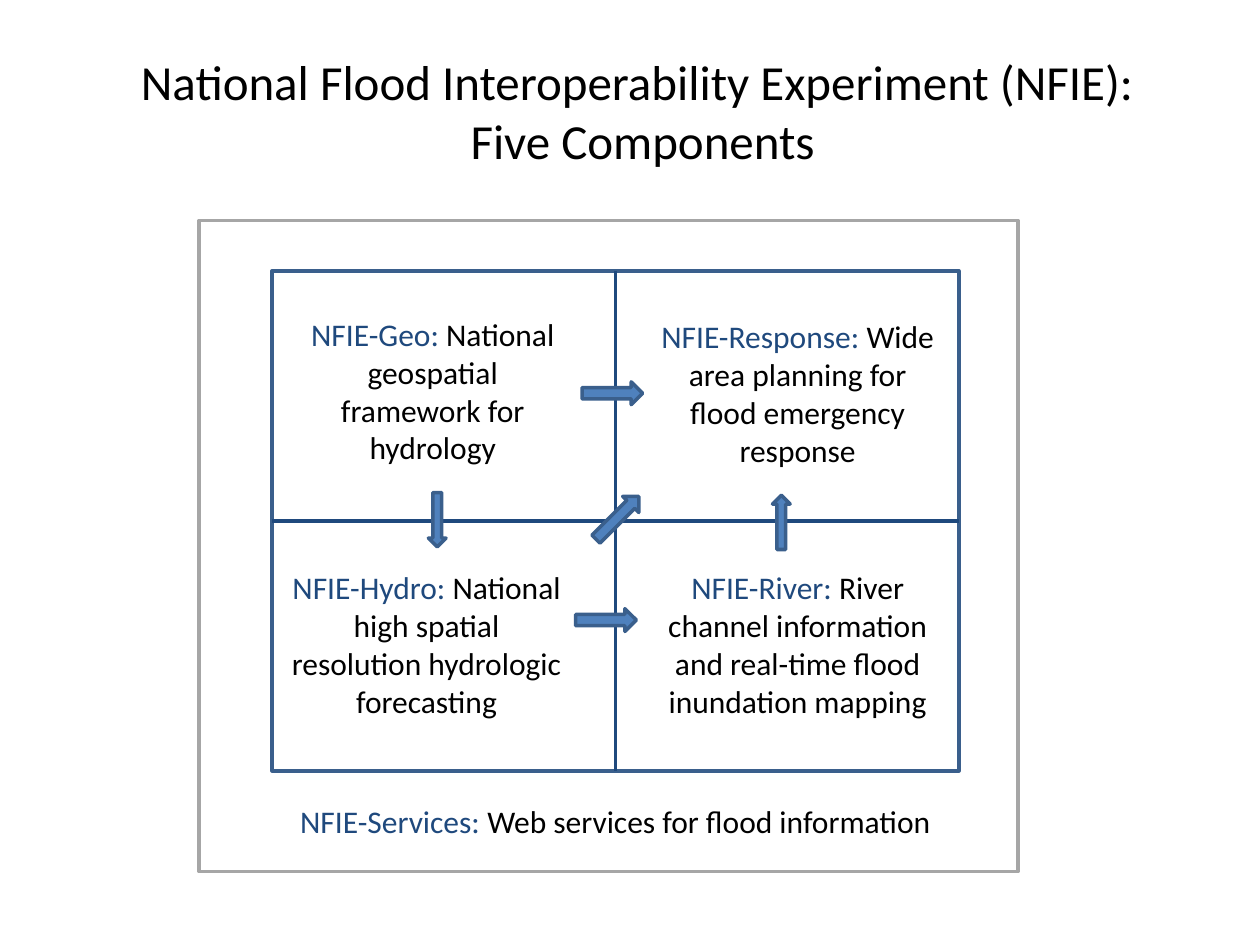
from lxml import etree
from pptx import Presentation
from pptx.dml.color import RGBColor
from pptx.enum import shapes, text
from pptx.oxml import ns
from pptx.util import Pt

COLOURS = {
    "black": "000000",
    "navy": "1F497D",
    "blue": "4F81BD",
    "outline": "3A5F8C",
    "grey": "A6A6A6",
}
FONT = "Calibri"
ARROW_LENGTH = 34.6
ARROW_WIDTH = 13

# Left, top, width and height of the four-part matrix
MATRIX = (155.5, 154.8, 392.4, 285.8)

# Name, description, left, top, width
COMPONENTS = [
    ("NFIE-Geo: ", "National geospatial framework for hydrology", 165.6, 176.4, 163.4),
    ("NFIE-Hydro: ", "National high spatial resolution hydrologic forecasting",
     157.7, 321.1, 172.1),
    ("NFIE-River: ", "River channel information and real-time flood inundation mapping",
     370.1, 321.1, 171.4),
    ("NFIE-Response: ", "Wide area planning for flood emergency response",
     370.1, 177.8, 171.4),
]

# Left, top, rotation
FLAT_ARROWS = [(332.6, 218.2, 0), (329, 347.8, 0), (335.5, 289.4, -45)]
UPRIGHT_ARROWS = [(244.8, 281.5, 0), (441.4, 283, 180)]


def colour(name):
    return RGBColor.from_string(COLOURS[name])


def add_figure(page, kind, left, top, width, height, line, fill=None):
    figure = page.shapes.add_shape(kind, Pt(left), Pt(top), Pt(width), Pt(height))
    figure.shadow.inherit = False
    figure.line.color.rgb = colour(line)
    figure.line.width = Pt(2)
    if fill:
        figure.fill.solid()
        figure.fill.fore_color.rgb = colour(fill)
    else:
        figure.fill.background()
    return figure


def add_divider(page, x1, y1, x2, y2):
    divider = page.shapes.add_connector(
        shapes.MSO_CONNECTOR.STRAIGHT, Pt(x1), Pt(y1), Pt(x2), Pt(y2))
    divider.line.color.rgb = colour("navy")
    divider.line.width = Pt(2.25)
    etree.SubElement(divider._element.spPr, ns.qn("a:effectLst"))


def add_matrix(page):
    left, top, width, height = MATRIX
    middle_x, middle_y = left + width / 2, top + height / 2
    add_figure(page, shapes.MSO_SHAPE.RECTANGLE, *MATRIX, "outline")
    add_divider(page, middle_x, top, middle_x, top + height)
    add_divider(page, left, middle_y, left + width, middle_y)


def add_text(page, left, top, width, height, size, lines, wrap=True):
    """Add centred text; each line is a list of (words, colour name) runs."""
    box = page.shapes.add_textbox(Pt(left), Pt(top), Pt(width), Pt(height))
    box.text_frame.word_wrap = wrap
    para = box.text_frame.paragraphs[0]
    para.alignment = text.PP_ALIGN.CENTER
    for number, runs in enumerate(lines):
        if number:
            para.add_line_break()
        for words, shade in runs:
            span = para.add_run()
            span.text = words
            span.font.name = FONT
            span.font.size = Pt(size)
            span.font.color.rgb = colour(shade)
    return box


def add_component(page, name, description, left, top, width, height=94.3, wrap=True):
    box = add_text(page, left, top, width, height, 18,
                   [[(name, "navy"), (description, "black")]], wrap)
    box.text_frame.auto_size = text.MSO_AUTO_SIZE.SHAPE_TO_FIT_TEXT


def add_arrow(page, kind, left, top, width, height, rotation):
    arrow = add_figure(page, kind, left, top, width, height, "outline", "blue")
    arrow.rotation = rotation


def main():
    deck = Presentation()
    deck.slide_width, deck.slide_height = Pt(720), Pt(540)
    page = deck.slides.add_slide(deck.slide_layouts[6])

    title = add_text(page, 43.2, 18, 648, 90, 28, [
        [("National Flood Interoperability Experiment (NFIE): ", "black")],
        [("Five Components", "black")],
    ])
    title.text_frame.vertical_anchor = text.MSO_ANCHOR.MIDDLE

    add_figure(page, shapes.MSO_SHAPE.RECTANGLE, 113.8, 126, 468, 372, "grey")
    add_matrix(page)
    add_component(page, "NFIE-Services: ", "Web services for flood information",
                  162, 455, 379.4, 28.8, wrap=False)
    for component in COMPONENTS:
        add_component(page, *component)
    for left, top, rotation in FLAT_ARROWS:
        add_arrow(page, shapes.MSO_SHAPE.RIGHT_ARROW, left, top,
                  ARROW_LENGTH, ARROW_WIDTH, rotation)
    for left, top, rotation in UPRIGHT_ARROWS:
        add_arrow(page, shapes.MSO_SHAPE.DOWN_ARROW, left, top, 10.1, 31, rotation)

    deck.save("out.pptx")


if __name__ == "__main__":
    main()
